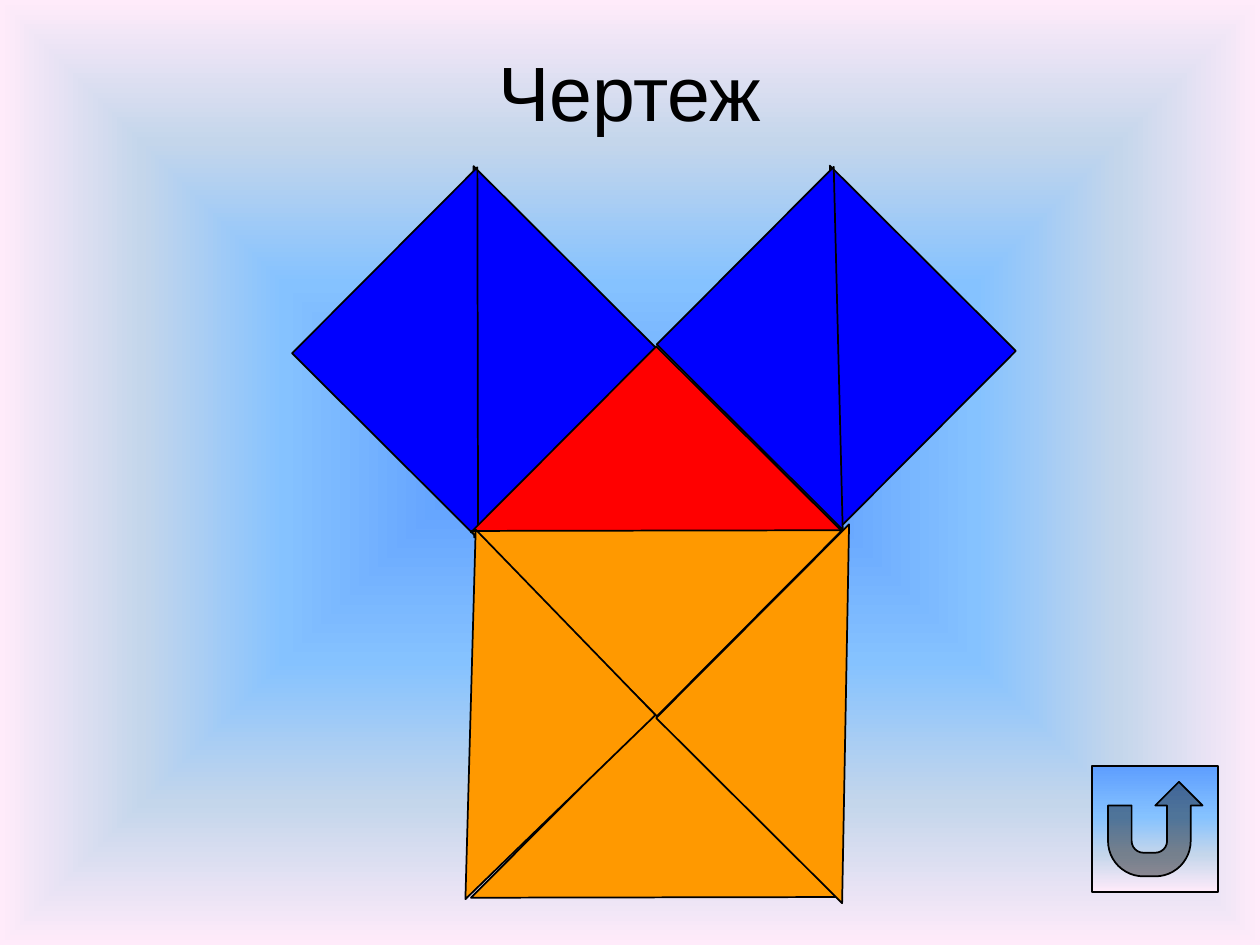
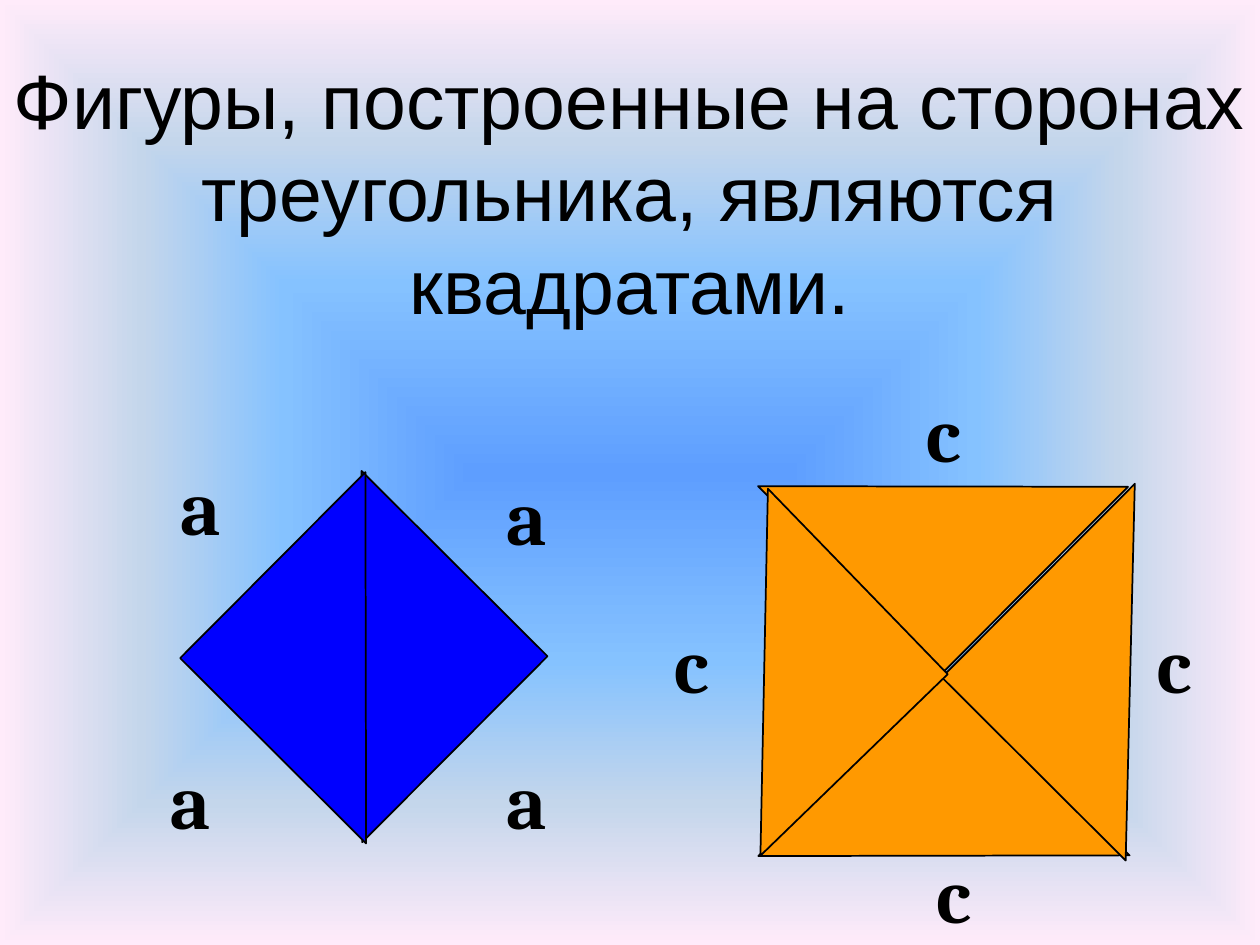
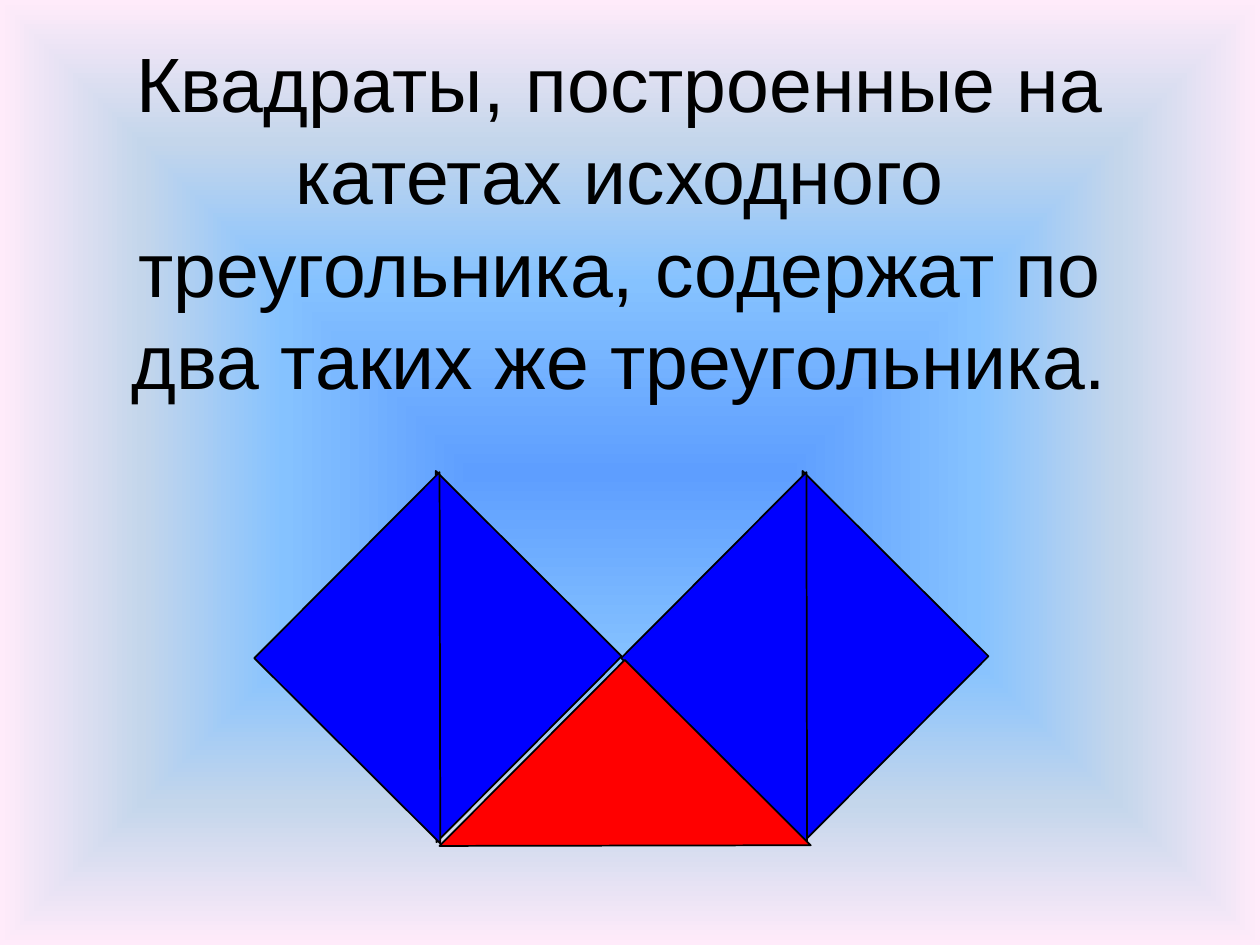
from lxml import etree
from pptx import Presentation
from pptx.dml.color import RGBColor
from pptx.enum.shapes import MSO_SHAPE as Preset
from pptx.enum.text import MSO_ANCHOR as Anchor, MSO_AUTO_SIZE as AutoSize, PP_ALIGN as Align
from pptx.oxml.ns import nsdecls, qn
from pptx.util import Pt

COLORS = {"ink": "000000", "leg": "0000FF", "hypotenuse": "FF9900", "base": "FF0000"}
GRADIENT = {0: "5E9EFF", 40: "85C2FF", 70: "C4D6EB", 100: "FFEBFA"}
FROM_CENTER = '<a:path path="shape"><a:fillToRect l="50000" t="50000" r="50000" b="50000"/></a:path>'
DOWNWARD = '<a:lin ang="5400000" scaled="0"/>'
SIDE = 150
TEXT_SIZE = 44


def color(name):
    return RGBColor.from_string(COLORS[name])


def set_gradient(fill, properties, direction):
    """Give a background or shape the shared gradient."""
    fill.solid()
    stops = "".join(
        f'<a:gs pos="{position * 1000}"><a:srgbClr val="{value}"/></a:gs>'
        for position, value in GRADIENT.items()
    )
    gradient = etree.fromstring(
        f'<a:gradFill {nsdecls("a")} rotWithShape="1"><a:gsLst>{stops}</a:gsLst>{direction}</a:gradFill>'
    )
    solid = properties.find(qn("a:solidFill"))
    properties.replace(solid, gradient)


def add_text(slide, text, left, top, width, height, font_name, bold=False):
    shape = slide.shapes.add_textbox(Pt(left), Pt(top), Pt(width), Pt(height))
    paragraph = shape.text_frame.paragraphs[0]
    paragraph.text = text
    paragraph.alignment = Align.CENTER
    font = paragraph.font
    font.name, font.size, font.bold = font_name, Pt(TEXT_SIZE), bold
    font.color.rgb = color("ink")
    return shape.text_frame


def add_title(slide, text, left, top, width, height):
    frame = add_text(slide, text, left, top, width, height, "Arial")
    frame.word_wrap = True
    frame.vertical_anchor = Anchor.MIDDLE


def add_side_label(slide, letter, width, left, top):
    frame = add_text(slide, letter, left, top, width, 60, "Cambria", bold=True)
    frame.word_wrap = False
    frame.auto_size = AutoSize.SHAPE_TO_FIT_TEXT


def add_outlined(shapes, preset, left, top, width, height):
    shape = shapes.add_shape(preset, Pt(left), Pt(top), Pt(width), Pt(height))
    shape.shadow.inherit = False
    shape.line.color.rgb = color("ink")
    shape.line.width = Pt(1)
    return shape


def add_triangle(shapes, fill, rotation, left, top, width=SIDE, height=SIDE):
    shape = add_outlined(shapes, Preset.RIGHT_TRIANGLE, left, top, width, height)
    shape.rotation = rotation
    shape.fill.solid()
    shape.fill.fore_color.rgb = color(fill)


def add_leg_square(slide, left, top, height=SIDE):
    """Square on a leg: two triangles facing each other."""
    shapes = slide.shapes.add_group_shape().shapes
    add_triangle(shapes, "leg", 224.9, left, top, height=height)
    add_triangle(shapes, "leg", 44.9, left + 2.2, top + 0.7, height=height)


def add_return_button(slide, left, top, size):
    button = add_outlined(slide.shapes, Preset.ACTION_BUTTON_RETURN, left, top, size, size)
    set_gradient(button.fill, button.element.spPr, DOWNWARD)


def build_drawing(slide):
    add_title(slide, "Чертеж", 54, 21.6, 612, 60)
    add_leg_square(slide, 401.8, 126.7, height=143.3)
    add_leg_square(slide, 195.8, 126)
    # Triangle with the square on its hypotenuse
    for fill, *placement in (
        ("hypotenuse", 134.9, 300.2, 437.8),
        ("base", 134.9, 300.2, 229),
        ("hypotenuse", 314.9, 300.2, 228.2),
        ("hypotenuse", 44.9, 408.2, 329.8, SIDE, 156.2),
        ("hypotenuse", 225.9, 195.1, 332.6, 147.6, 151.2),
    ):
        add_triangle(slide.shapes, fill, *placement)
    add_return_button(slide, 624.2, 437.8, 72)


def build_squares(slide):
    add_title(slide, "Фигуры, построенные на сторонах треугольника, являются квадратами.",
              0, 0, 720, 218.2)
    # Square on the hypotenuse
    shapes = slide.shapes.add_group_shape().shapes
    for placement in (
        (314.9, 464.4, 203, 149, SIDE),
        (134.9, 464.4, 414),
        (44.9, 571.7, 306, 148.3, 156.2),
        (225.9, 362.9, 309.6, 147.6, 149),
    ):
        add_triangle(shapes, "hypotenuse", *placement)
    add_leg_square(slide, 131.8, 300.2)
    # Side lengths
    for left, top in ((95.8, 258.5), (282.2, 264.2), (282.2, 426.2), (90, 426.2)):
        add_side_label(slide, "a", 36.7, left, top)
    for left, top in ((653.8, 348.5), (378, 348.5), (522, 216.7), (527.8, 480.2)):
        add_side_label(slide, "c", 33.8, left, top)


def build_legs(slide):
    add_title(slide, "Квадраты, построенные на катетах исходного треугольника, "
              "содержат по два таких же треугольника.", 48.2, -9.4, 612, 270.7)
    for left in (174.2, 383.8):
        add_leg_square(slide, left, 300.2)
    add_triangle(slide.shapes, "base", 134.9, 282.2, 408.2)


def main():
    presentation = Presentation()
    presentation.slide_width, presentation.slide_height = Pt(720), Pt(540)
    # Shared background
    master = presentation.slide_master
    fill = master.background.fill
    set_gradient(fill, master.element.find(".//" + qn("p:bgPr")), FROM_CENTER)
    for build in (build_drawing, build_squares, build_legs):
        build(presentation.slides.add_slide(presentation.slide_layouts[6]))
    presentation.save("out.pptx")


if __name__ == "__main__":
    main()
